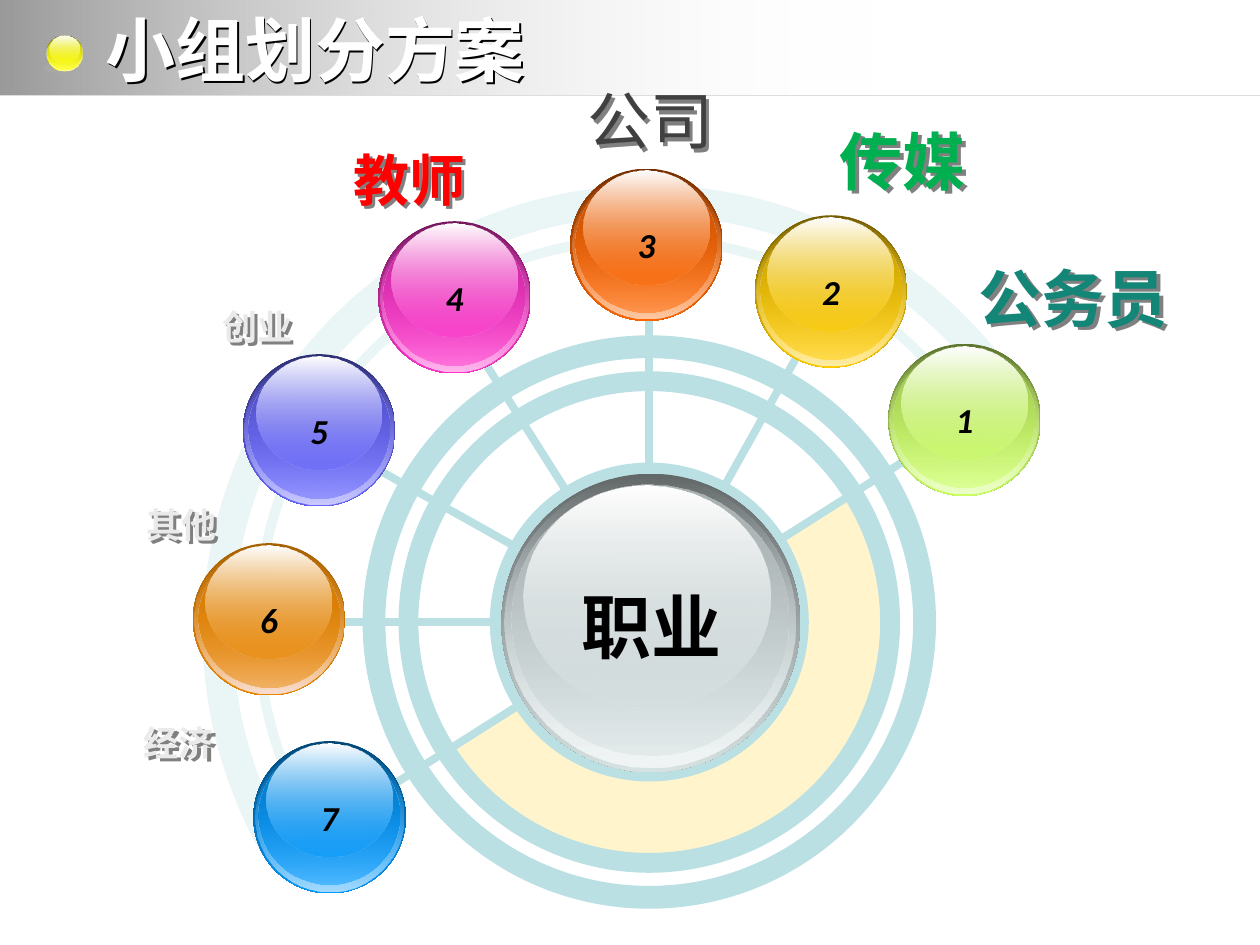
import pptx
import pptx.dml.color
import pptx.enum.dml
import pptx.enum.shapes
import pptx.enum.text
import pptx.oxml
import pptx.oxml.ns
import pptx.util
from lxml import etree

Cm = pptx.util.Cm
SHAPE = pptx.enum.shapes.MSO_SHAPE

THEME = {
    "ring": "BBE0E3", "sector": "FFCC00", "rule": "DDDDDD", "bullet shadow": "B2B2B2",
    "title": "FFFFFF", "text": "000000", "muted": "EAEAEA",
    "label shadow": "808080", "title shadow": "000000",
    "cjk": "Noto Sans CJK SC", "latin": "Arial", "number": "Calibri", "title font": "DejaVu Sans",
    "large": 40, "medium": 36, "teacher": 32, "small": 20,
}

# Lengths are centimetres.
TITLE = "小组划分方案"
HUB = (13.09, 12.54)
CENTRE_TEXT = "职业"
# Ball colours: rim, body, inner rim, lower glow
BULLET = (0.94, 0.71, 0.73, ("767600", "FFFF00", "CACA00", "FFFFA6"))
CENTRE_BALL = (10.11, 9.55, 6.02, ("636869", "D6E1E2", "AAB2B3", "F1F5F5"))
BALL_SIZE = 3.07
BALLS = [  # number, left, top, colours
    ("6", 3.89, 10.95, ("A86102", "EB8803", "D47B03", "F8DFD4")),
    ("1", 17.91, 6.93, ("5E762F", "CCFF66", "A2CA51", "EDFFCA")),
    ("2", 15.22, 4.34, ("765E00", "FFCC00", "CAA200", "FFEDA6")),
    ("7", 5.11, 14.94, ("004776", "0099FF", "0079CA", "A6DBFF")),
    ("3", 11.50, 3.40, ("762F00", "FF6600", "CA5100", "FFCAA6")),
    ("4", 7.63, 4.46, ("76185E", "FF33CC", "CA28A2", "FFB8ED")),
    ("5", 4.90, 7.14, ("2F2F76", "6666FF", "5151CA", "CACAFF")),
]
LABELS = [  # text, centre x, centre y, width, size, font, colour, bold
    ("经济", 3.61, 14.96, 3.81, "small", "latin", THEME["muted"], True),
    ("创业", 5.19, 6.58, 3.00, "small", "latin", THEME["muted"], True),
    ("教师", 8.25, 3.61, 3.02, "teacher", "cjk", "FF0000", True),
    ("公司", 13.11, 2.41, 3.40, "medium", "cjk", "404040", False),
    ("传媒", 18.20, 3.23, 4.24, "medium", "cjk", "00B050", True),
    ("公务员", 21.64, 5.99, 4.60, "medium", "latin", "138677", True),
    ("其他", 3.66, 10.57, 3.12, "small", "latin", THEME["muted"], True),
]
ARCS = [  # centre, diameter, thickness, start and end degrees, colour, opacity
    (HUB, 9.43, 1.52, 328, 147.5, "sector", 20),
    ((13.09, 12.74), 18.01, 0.61, 149.5, 328.2, "ring", 30),
    ((13.00, 12.62), 15.80, 0.20, 142.5, 333.9, "ring", 30),
]
SPOKES = [
    ((13.09, 6.17), HUB), ((9.68, 7.16), HUB), ((18.47, 9.14), (7.72, 15.95)),
    ((7.54, 9.42), HUB), ((16.18, 6.98), (12.98, 12.70)), (HUB, (6.73, 12.54)),
]
HUB_DISC = 6.43
RINGS = [(10.11, 0.40), (11.56, 0.46)]  # diameter, thickness


def rgb(value):
    return pptx.dml.color.RGBColor.from_string(value)


def set_opacity(shape, *percents):
    """Give each fill colour of the shape its opacity, in order."""
    for colour, percent in zip(shape._element.spPr.xpath(".//a:srgbClr"), percents):
        if percent < 100:
            alpha = etree.SubElement(colour, pptx.oxml.ns.qn("a:alpha"))
            alpha.set("val", str(percent * 1000))


def fill_solid(shape, colour, opacity=100):
    shape.shadow.inherit = False
    shape.line.fill.background()
    shape.fill.solid()
    shape.fill.fore_color.rgb = rgb(colour)
    set_opacity(shape, opacity)


def fill_gradient(shape, stops, angle):
    shape.shadow.inherit = False
    shape.line.fill.background()
    shape.fill.gradient()
    shape.fill.gradient_angle = angle
    for stop, position, (colour, _) in zip(shape.fill.gradient_stops, (0, 1), stops):
        stop.color.rgb = rgb(colour)
        stop.position = position
    set_opacity(shape, *(opacity for _, opacity in stops))


def add_shape(shapes, kind, left, top, width, height):
    return shapes.add_shape(kind, Cm(left), Cm(top), Cm(width), Cm(height))


def add_round(shapes, kind, centre, size):
    return add_shape(shapes, kind, centre[0] - size / 2, centre[1] - size / 2, size, size)


def add_ball(group, left, top, size, colours, highlight=(0.085, 0.015)):
    """Stack four glossy ellipses, placed as fractions of the ball."""
    rim, body, inner, glow = colours
    layers = [
        (0, 0, 1, 1, (rim, 100), (body, 100)),
        (0.01, 0.01, 0.975, 0.975, (body, 0), (glow, 100)),
        (0.035, 0.035, 0.925, 0.91, (inner, 100), (body, 48)),
        (*highlight, 0.825, 0.745, ("FFFFFF", 100), (body, 38)),
    ]
    for x, y, width, height, *stops in layers:
        ellipse = add_shape(group.shapes, SHAPE.OVAL, left + x * size, top + y * size,
                            width * size, height * size)
        fill_gradient(ellipse, stops, 270)


def add_arc(slide, centre, diameter, thickness, start, end, colour, opacity):
    arc = add_round(slide.shapes, SHAPE.BLOCK_ARC, centre, diameter)
    # An angle is stored in 60000ths of a degree, an adjustment in 100000ths.
    arc.adjustments[0] = start * 0.6
    arc.adjustments[1] = end * 0.6
    arc.adjustments[2] = thickness / diameter
    fill_solid(arc, THEME[colour], opacity)


def add_line(slide, start, end, colour, width):
    line = slide.shapes.add_connector(pptx.enum.shapes.MSO_CONNECTOR.STRAIGHT,
                                      *(Cm(value) for value in (*start, *end)))
    line.line.color.rgb = rgb(colour)
    line.line.width = pptx.util.Pt(width)
    etree.SubElement(line._element.spPr, pptx.oxml.ns.qn("a:effectLst"))
    return line


def format_text(shape, text, size, font, colour, bold=True, italic=False):
    paragraph = shape.text_frame.paragraphs[0]
    paragraph.text = text
    paragraph.font.size = pptx.util.Pt(THEME[size])
    paragraph.font.name = THEME[font]
    paragraph.font.bold = bold
    paragraph.font.italic = italic
    paragraph.font.color.rgb = rgb(colour)
    east_asian = etree.Element(pptx.oxml.ns.qn("a:ea"), typeface=THEME["cjk"])
    paragraph._p.xpath("./a:pPr/a:defRPr/a:latin")[0].addnext(east_asian)
    shape.text_frame.vertical_anchor = pptx.enum.text.MSO_ANCHOR.MIDDLE
    return paragraph


def add_text(slide, text, x, y, width, *style, **options):
    """Add a non-wrapping text box centred on x, y."""
    height = 0.86
    box = slide.shapes.add_textbox(Cm(x - width / 2), Cm(y - height / 2), Cm(width), Cm(height))
    box.text_frame.word_wrap = False
    format_text(box, text, *style, **options).alignment = pptx.enum.text.PP_ALIGN.CENTER
    return box


def add_shadow(shape, colour, distance):
    shape._element.spPr.append(pptx.oxml.parse_xml(
        f'<a:effectLst {pptx.oxml.ns.nsdecls("a")}><a:outerShdw dist="{Cm(distance)}" '
        f'dir="2700000" algn="ctr"><a:srgbClr val="{colour}"/></a:outerShdw></a:effectLst>'))


def main():
    presentation = pptx.Presentation()
    presentation.slide_width, presentation.slide_height = Cm(25.4), Cm(19.05)
    slide = presentation.slides.add_slide(presentation.slide_layouts[5])

    bar = add_shape(slide.shapes, SHAPE.RECTANGLE, 0, 0, 17.7, 1.92)
    fill_gradient(bar, [("000000", 40), ("FFFFFF", 0)], 0)
    rule = add_line(slide, (0, 1.92), (25.4, 1.92), THEME["rule"], 0.25)
    rule.line.dash_style = pptx.enum.dml.MSO_LINE.ROUND_DOT
    title = slide.shapes.title
    title.left, title.top, title.width, title.height = Cm(1.87), Cm(0), Cm(11.63), Cm(1.96)
    paragraph = format_text(title, TITLE, "large", "title font", THEME["title"])
    paragraph.alignment = pptx.enum.text.PP_ALIGN.LEFT
    title.text_frame.auto_size = pptx.enum.text.MSO_AUTO_SIZE.NONE
    add_shadow(title, THEME["title shadow"], 0.05)
    rule._element.addnext(title._element)
    bullet = slide.shapes.add_group_shape()
    bullet_shadow = add_shape(bullet.shapes, SHAPE.OVAL, 0.86, 1.27, 0.66, 0.2)
    fill_solid(bullet_shadow, THEME["bullet shadow"], 30)
    add_ball(bullet, *BULLET)

    for arc in ARCS:
        add_arc(slide, *arc)
    for start, end in SPOKES:
        spoke = add_line(slide, start, end, THEME["ring"], 4.5)
        for tip in ("a:headEnd", "a:tailEnd"):
            etree.SubElement(spoke.line._ln, pptx.oxml.ns.qn(tip), type="oval")
    wheel = slide.shapes.add_group_shape()
    fill_solid(add_round(wheel.shapes, SHAPE.OVAL, HUB, HUB_DISC), THEME["ring"])
    for diameter, thickness in RINGS:
        ring = add_round(wheel.shapes, SHAPE.DONUT, HUB, diameter)
        ring.adjustments[0] = thickness / diameter
        fill_solid(ring, THEME["ring"])

    add_ball(slide.shapes.add_group_shape(), *CENTRE_BALL, highlight=(0.075, 0.038))
    add_text(slide, CENTRE_TEXT, 13.14, 12.61, 3.84, "large", "cjk", THEME["text"])
    for _, left, top, colours in BALLS:
        add_ball(slide.shapes.add_group_shape(), left, top, BALL_SIZE, colours)
    for label in LABELS:
        add_shadow(add_text(slide, *label), THEME["label shadow"], 0.1)
    for number, left, top, _ in sorted(BALLS):
        add_text(slide, number, left + BALL_SIZE / 2, top + BALL_SIZE / 2, 1.2,
                 "small", "number", THEME["text"], italic=True)
    presentation.save("out.pptx")


if __name__ == "__main__":
    main()
